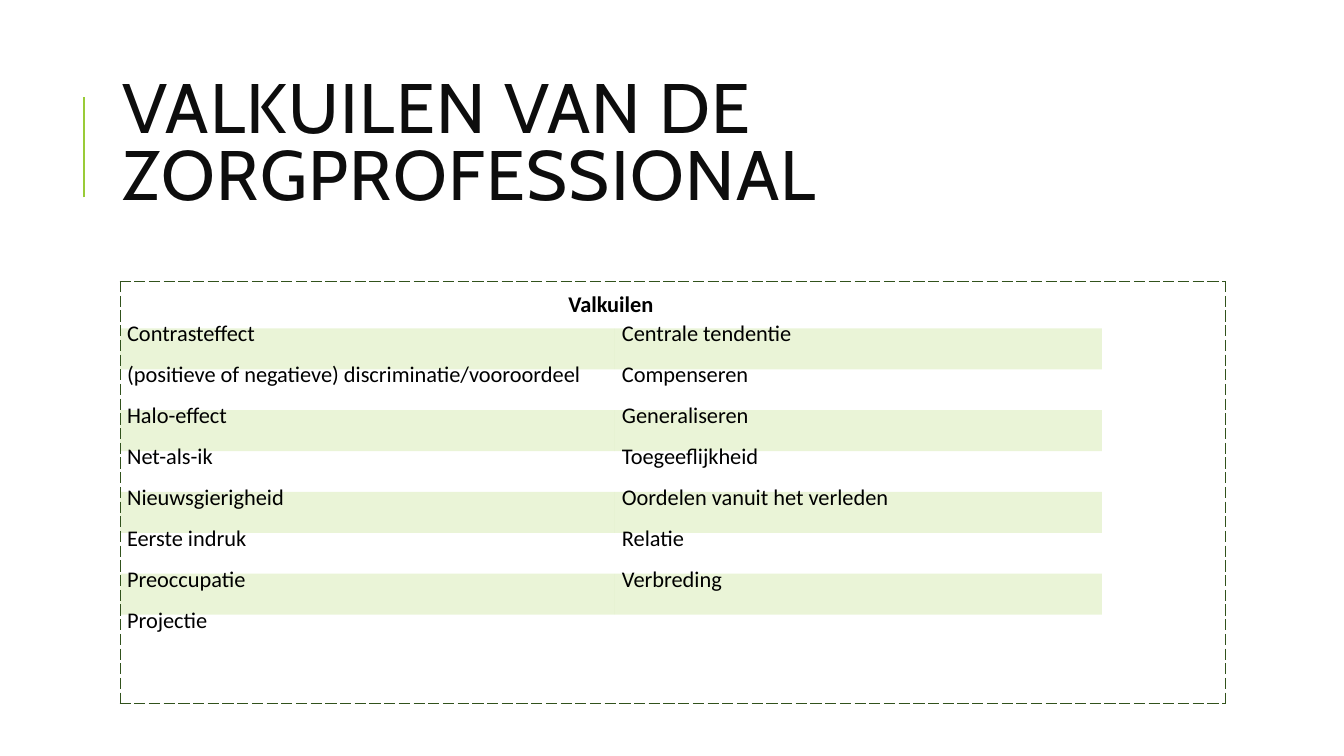
from dataclasses import dataclass
from lxml.etree import SubElement
from pptx import Presentation
from pptx.dml.color import RGBColor
from pptx.enum.shapes import MSO_CONNECTOR
from pptx.enum.text import MSO_ANCHOR, MSO_AUTO_SIZE, PP_ALIGN
from pptx.oxml import parse_xml
from pptx.oxml.ns import nsdecls, qn
from pptx.util import Pt


@dataclass(frozen=True)
class Theme:
    accent: str = "99CB38"
    frame: str = "31521C"
    title: str = "0D0D0D"
    body: str = "000000"
    title_font: str = "Cabin"
    body_font: str = "Calibri"
    title_size: float = 50
    body_size: float = 16
    plain_table: str = "{2D5ABB26-0587-4C30-8999-92F81FD0307C}"


@dataclass(frozen=True)
class Box:
    left: float
    top: float
    width: float
    height: float

    def points(self):
        return [Pt(v) for v in (self.left, self.top, self.width, self.height)]


THEME = Theme()
HEADING = "Valkuilen"
PITFALLS = [
    ("Contrasteffect", "Centrale tendentie"),
    ("(positieve of negatieve) discriminatie/vooroordeel", "Compenseren"),
    ("Halo-effect", "Generaliseren"),
    ("Net-als-ik", "Toegeeflijkheid"),
    ("Nieuwsgierigheid", "Oordelen vanuit het verleden"),
    ("Eerste indruk", "Relatie"),
    ("Preoccupatie", "Verbreding"),
    ("Projectie", ""),
]


def apply(target, formats):
    for attribute, value in formats.items():
        setattr(target, attribute, value)


def style_font(font, face, size, colour, bold=False):
    apply(font, {"name": face, "size": Pt(size), "bold": bold})
    font.color.rgb = RGBColor.from_string(colour)


def plain_table(slide, rows, columns, box):
    table = slide.shapes.add_table(rows, columns, *box.points()).table
    apply(table, {"first_row": False, "horz_banding": False})
    table._tbl.tblPr.find(qn("a:tableStyleId")).text = THEME.plain_table
    return table


def write_cell(cell, wording, align=PP_ALIGN.LEFT, top=0, bold=False):
    apply(cell, {
        "margin_left": Pt(5), "margin_right": Pt(5),
        "margin_top": Pt(top), "margin_bottom": 0,
        "vertical_anchor": MSO_ANCHOR.TOP,
    })
    paragraph = cell.text_frame.paragraphs[0]
    apply(paragraph, {"alignment": align, "line_spacing": Pt(14)})
    if wording:
        run = paragraph.add_run()
        run.text = wording
        style_font(run.font, THEME.body_font, THEME.body_size, THEME.body, bold)


def tint_cell(cell):
    cell.fill.solid()
    cell.fill.fore_color.rgb = RGBColor.from_string(THEME.accent)
    colour = cell._tc.tcPr.find(qn("a:solidFill"))[0]
    SubElement(colour, qn("a:alpha")).set("val", "20000")


def add_title(slide, box):
    title = slide.shapes.title
    apply(title, dict(zip(("left", "top", "width", "height"), box.points())))
    apply(title.text_frame, {
        "word_wrap": True, "auto_size": MSO_AUTO_SIZE.NONE,
        "vertical_anchor": MSO_ANCHOR.MIDDLE,
    })
    paragraph = title.text_frame.paragraphs[0]
    apply(paragraph, {"alignment": PP_ALIGN.LEFT, "line_spacing": 0.8})
    run = paragraph.add_run()
    run.text = "VALKUILEN VAN DE ZORGPROFESSIONAL"
    style_font(run.font, THEME.title_font, THEME.title_size, THEME.title)
    run.font._element.set("spc", "100")

    rule_x = Pt(box.left - 20.6)
    middle = box.top + box.height / 2
    rule = slide.shapes.add_connector(
        MSO_CONNECTOR.STRAIGHT, rule_x, Pt(middle + 36), rule_x, Pt(middle - 36))
    rule.line.color.rgb = RGBColor.from_string(THEME.accent)
    rule.line.width = Pt(1.5)
    SubElement(rule._element.spPr, qn("a:effectLst"))


def add_pitfalls(slide, box):
    table = plain_table(slide, len(PITFALLS) + 1, 2, box)
    first_width, heading_height = 353.5, 35
    row_height = (box.height - heading_height) / len(PITFALLS)
    table.columns[0].width = Pt(first_width)
    table.columns[1].width = Pt(box.width - first_width)
    table.rows[0].height = Pt(heading_height)
    table.cell(0, 0).merge(table.cell(0, 1))
    write_cell(table.cell(0, 0), HEADING, PP_ALIGN.CENTER, top=14, bold=True)
    for row, pair in enumerate(PITFALLS, 1):
        table.rows[row].height = Pt(row_height)
        for column, wording in enumerate(pair):
            cell = table.cell(row, column)
            write_cell(cell, wording)
            if row % 2:
                tint_cell(cell)


def add_frame(slide, box):
    cell = plain_table(slide, 1, 1, box).cell(0, 0)
    cell.fill.background()
    for position, side in enumerate(("lnL", "lnR", "lnT", "lnB")):
        border = parse_xml(
            f'<a:{side} {nsdecls("a")} w="{Pt(1)}"><a:solidFill>'
            f'<a:srgbClr val="{THEME.frame}"/></a:solidFill>'
            f'<a:prstDash val="dash"/></a:{side}>')
        cell._tc.tcPr.insert(position, border)


def main():
    presentation = Presentation()
    apply(presentation, {"slide_width": Pt(960), "slide_height": Pt(540)})
    slide = presentation.slides.add_slide(presentation.slide_layouts[5])
    add_title(slide, Box(80.6, 46, 765.4, 118))
    add_pitfalls(slide, Box(85.8, 199.6, 701.2, 268.6))
    add_frame(slide, Box(85.8, 201.2, 789.8, 301.6))
    presentation.save("out.pptx")


if __name__ == "__main__":
    main()
